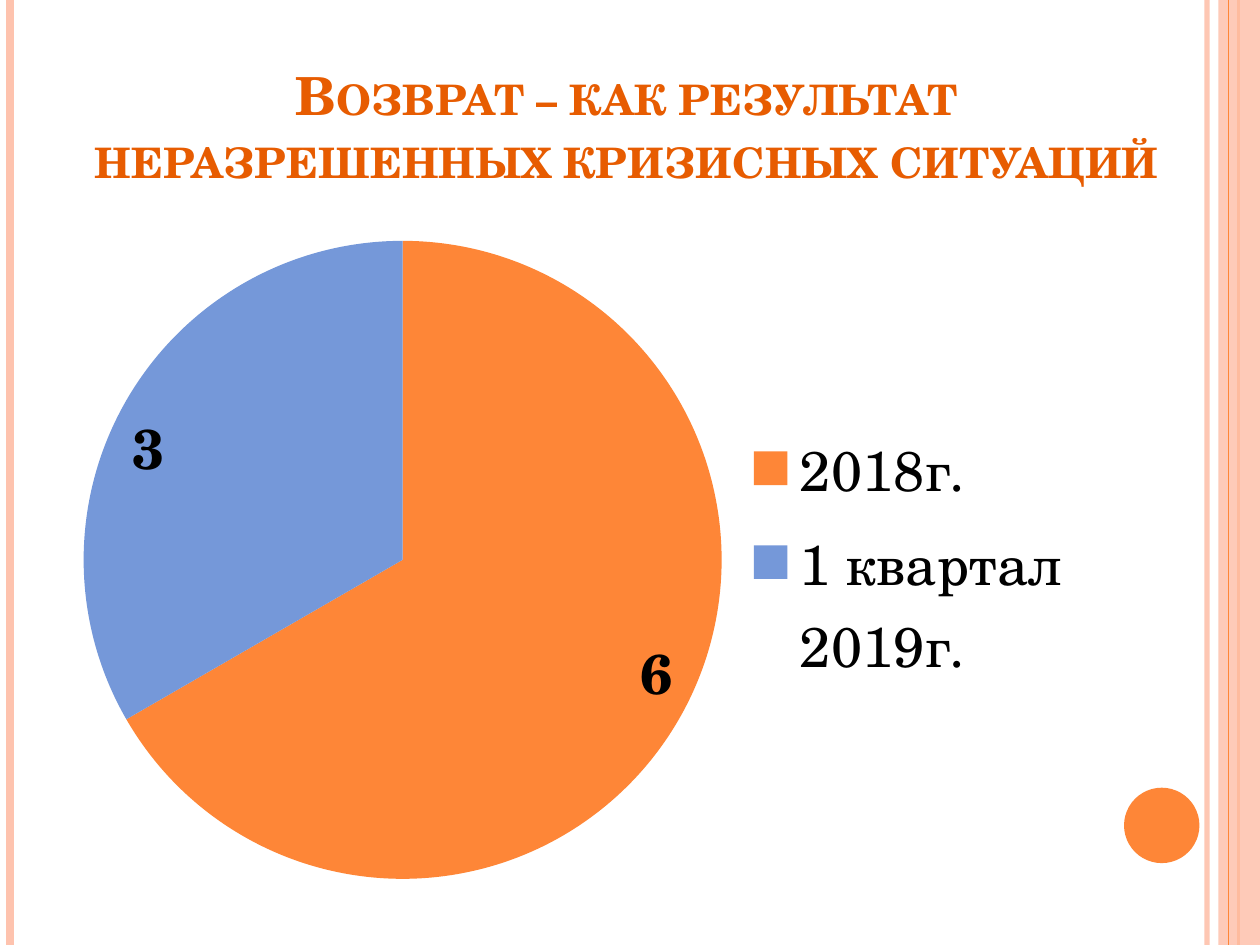
from dataclasses import dataclass

from lxml import etree
from pptx import Presentation
from pptx.chart import data
from pptx.dml import color
from pptx.enum import chart as charts, shapes, text
from pptx.oxml import ns, parse_xml
from pptx.util import Cm, Pt


@dataclass(frozen=True)
class Theme:
    font: str = "TeX Gyre Schola"
    orange: str = "FE8637"
    blue: str = "7598D9"
    peach: str = "FEC3AE"
    title: str = "E75C01"
    black: str = "000000"
    title_size: int = 30
    chart_size: int = 18
    label_size: int = 32


theme = Theme()


def write_text(frame, content, *, size, colour, bold=False, small_caps=False):
    paragraph = frame.paragraphs[0]
    paragraph.alignment = text.PP_ALIGN.CENTER
    run = paragraph.add_run()
    run.text = content
    run.font.name = theme.font
    run.font.size = Pt(size)
    run.font.bold = bold
    run.font.color.rgb = color.RGBColor.from_string(colour)
    if small_caps:
        run.font._element.set("cap", "small")


def paint(fill, colour, opacity=100):
    fill.solid()
    fill.fore_color.rgb = color.RGBColor.from_string(colour)
    if opacity < 100:
        tint = fill._xPr.find(".//" + ns.qn("a:srgbClr"))
        etree.SubElement(tint, ns.qn("a:alpha")).set("val", str(opacity * 1000))


presentation = Presentation()
presentation.slide_width = Cm(25.4)
presentation.slide_height = Cm(19.05)
slide = presentation.slides.add_slide(presentation.slide_layouts[6])

# Side stripes: x, colour, width in points, opacity; the band lies under the last
stripes = [
    (24.33, theme.peach, 3, 93),
    (0.2, theme.peach, 4.5, 100),
    (24.97, theme.orange, 1.5, 100),
    (24.77, theme.orange, 0.75, 100),
]
for x, colour, width, opacity in stripes:
    if x == 24.77:
        band = slide.shapes.add_shape(
            shapes.MSO_SHAPE.RECTANGLE, Cm(24.56), 0, Cm(0.84), Cm(19.05))
        band.shadow.inherit = False
        paint(band.fill, theme.peach, 87)
        band.line.fill.background()
    stripe = slide.shapes.add_connector(
        shapes.MSO_CONNECTOR.STRAIGHT, Cm(x), 0, Cm(x), Cm(19.05))
    stripe.line.width = Pt(width)
    paint(stripe.line.fill, colour, opacity)
    etree.SubElement(stripe._element.spPr, ns.qn("a:effectLst"))

dot = slide.shapes.add_shape(
    shapes.MSO_SHAPE.OVAL, Cm(22.66), Cm(15.88), Cm(1.52), Cm(1.52))
dot.shadow.inherit = False
paint(dot.fill, theme.orange)
dot.line.fill.background()

title = slide.shapes.add_textbox(Cm(1.27), Cm(0.76), Cm(22.73), Cm(3.18))
title.text_frame.word_wrap = True
title.text_frame.vertical_anchor = text.MSO_ANCHOR.BOTTOM
write_text(title.text_frame, "Возврат – как результат неразрешенных кризисных ситуаций",
           size=theme.title_size, colour=theme.title, bold=True, small_caps=True)

chart_data = data.CategoryChartData()
chart_data.categories = ["2018г.", "1 квартал 2019г."]
chart_data.add_series("Series 1", [6, 3])
chart = slide.shapes.add_chart(
    charts.XL_CHART_TYPE.PIE, Cm(1.27), Cm(4.45), Cm(20.75), Cm(13.54), chart_data).chart
chart.has_title = False
chart.has_legend = True
chart.legend.position = charts.XL_LEGEND_POSITION.RIGHT
chart.legend.include_in_layout = False

plot = chart.plots[0]
plot.vary_by_categories = True
plot.has_data_labels = True
labels = plot.data_labels
labels.show_value = True
labels.show_percentage = False
labels.position = charts.XL_LABEL_POSITION.INSIDE_END
labels.font.bold = True

for font, size in [(chart.font, theme.chart_size),
                   (chart.legend.font, theme.label_size),
                   (labels.font, theme.label_size)]:
    font.name = theme.font
    font.size = Pt(size)
    font.color.rgb = color.RGBColor.from_string(theme.black)

for index, colour in enumerate([theme.orange, theme.blue]):
    point = plot.series[0].points[index]
    paint(point.format.fill, colour)
    point.format.line.fill.background()

# Fixed place of the pie, as shares of the chart area
plot_area = chart._chartSpace.chart.plotArea
for layout in plot_area.findall(ns.qn("c:layout")):
    plot_area.remove(layout)
plot_area.insert(0, parse_xml(
    f'<c:layout {ns.nsdecls("c")}><c:manualLayout><c:layoutTarget val="inner"/>'
    '<c:xMode val="edge"/><c:yMode val="edge"/><c:x val="0.02"/><c:y val="0.03"/>'
    '<c:w val="0.62"/><c:h val="0.95"/></c:manualLayout></c:layout>'))

presentation.save("out.pptx")
